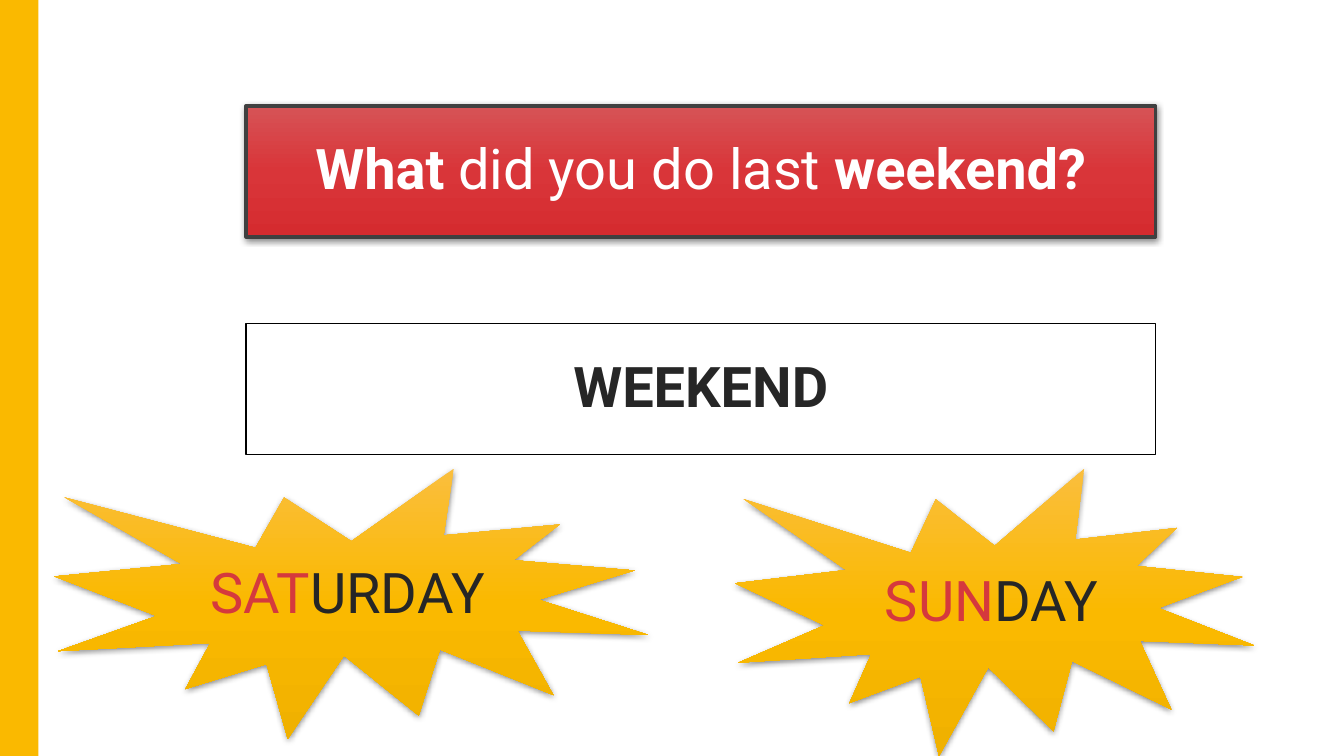
"""Build the weekend question slide."""
import pptx
import pptx.dml.color
import pptx.enum.shapes
import pptx.enum.text
import pptx.oxml
import pptx.oxml.ns
import pptx.util

PX = 9144
THEME = {
    "font": "Roboto",
    "size": 40,
    "white": "FFFFFF",
    "black": "000000",
    "ink": "262626",
    "red": "D5393D",
    "border": "404040",
    "gold": "FAB900",
    "red_gradient": ["D65356", "D93539", "D52B2F"],
    "gold_gradient": ["FABE3D", "FAB900", "F0B100"],
}
NAMESPACE = pptx.oxml.ns.nsdecls("a")
SHADOW = (
    f'<a:outerShdw {NAMESPACE} blurRad="55880" dist="15240" dir="5400000" rotWithShape="0">'
    '<a:srgbClr val="000000"><a:alpha val="45000"/></a:srgbClr></a:outerShdw>'
)


def color(name):
    """Return the theme colour of this name."""
    return pptx.dml.color.RGBColor.from_string(THEME[name])


def paint(shape, fill, line, width, shadow):
    """Apply a solid or gradient fill, an outline and a shadow."""
    properties = shape._element.spPr
    if isinstance(THEME[fill], list):
        shape.fill.gradient()
        shape.fill.gradient_angle = 270
        stops = properties.find(".//" + pptx.oxml.ns.qn("a:gsLst"))
        for stop in list(stops):
            stops.remove(stop)
        for index, value in enumerate(THEME[fill]):
            stops.append(pptx.oxml.parse_xml(
                f'<a:gs {NAMESPACE} pos="{index * 50000}"><a:srgbClr val="{value}"/></a:gs>'))
    else:
        shape.fill.solid()
        shape.fill.fore_color.rgb = color(fill)
    if line:
        shape.line.color.rgb = color(line)
        shape.line.width = pptx.util.Pt(width)
    else:
        shape.line.fill.background()
    shape.shadow.inherit = False
    if shadow:
        effects = properties.find(pptx.oxml.ns.qn("a:effectLst"))
        effects.append(pptx.oxml.parse_xml(SHADOW))


presentation = pptx.Presentation()
presentation.slide_width = 1333 * PX
presentation.slide_height = 750 * PX
slide = presentation.slides.add_slide(presentation.slide_layouts[6])

RECTANGLE = pptx.enum.shapes.MSO_SHAPE.RECTANGLE
BURST = pptx.enum.shapes.MSO_SHAPE.EXPLOSION1

sidebar = slide.shapes.add_shape(RECTANGLE, 0, 0, 38 * PX, 750 * PX)
paint(sidebar, "gold", None, 0, False)

cards = [
    (RECTANGLE, (244, 105, 902, 130), ("red_gradient", "border", 2.5, True),
     [("What", "white", True), (" did you do last ", "white", False), ("weekend?", "white", True)]),
    (RECTANGLE, (244, 321, 902, 130), ("white", "black", 1, False),
     [("WEEKEND", "ink", True)]),
    (BURST, (54, 465, 589, 268), ("gold_gradient", None, 0, True),
     [("SAT", "red", False), ("URDAY", "ink", False)]),
    (BURST, (729, 465, 515, 285), ("gold_gradient", None, 0, True),
     [("SUN", "red", False), ("DAY", "ink", False)]),
]
frame_format = {
    "word_wrap": True,
    "vertical_anchor": pptx.enum.text.MSO_ANCHOR.MIDDLE,
    "margin_left": 20 * PX,
    "margin_right": 20 * PX,
    "margin_top": 20 * PX,
    "margin_bottom": 20 * PX,
}
paragraph_format = {"alignment": pptx.enum.text.PP_ALIGN.CENTER, "line_spacing": 0.9}

for preset, box, style, words in cards:
    shape = slide.shapes.add_shape(preset, *(length * PX for length in box))
    paint(shape, *style)
    for name, value in frame_format.items():
        setattr(shape.text_frame, name, value)
    paragraph = shape.text_frame.paragraphs[0]
    for name, value in paragraph_format.items():
        setattr(paragraph, name, value)
    for text, ink, bold in words:
        run = paragraph.add_run()
        run.text = text
        run.font.color.rgb = color(ink)
        run_format = {"name": THEME["font"], "size": pptx.util.Pt(THEME["size"]), "bold": bold}
        for name, value in run_format.items():
            setattr(run.font, name, value)

presentation.save("out.pptx")
